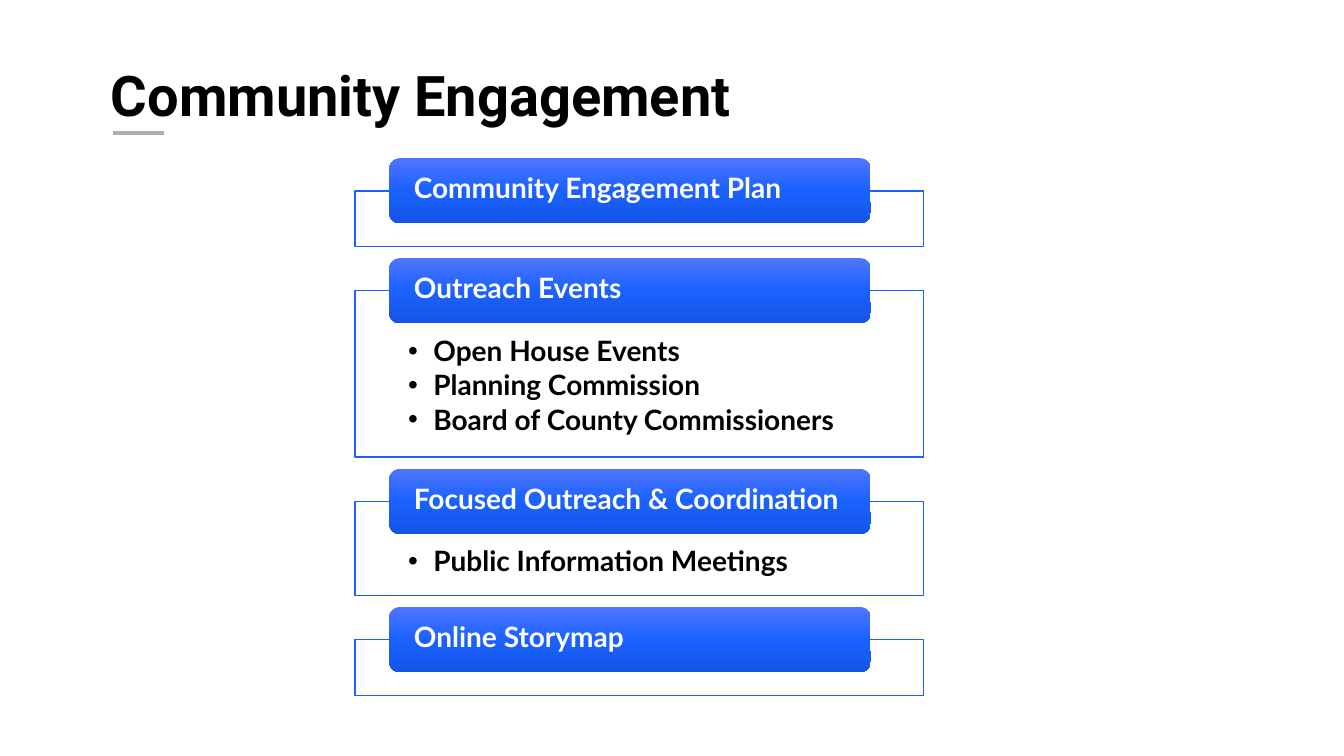
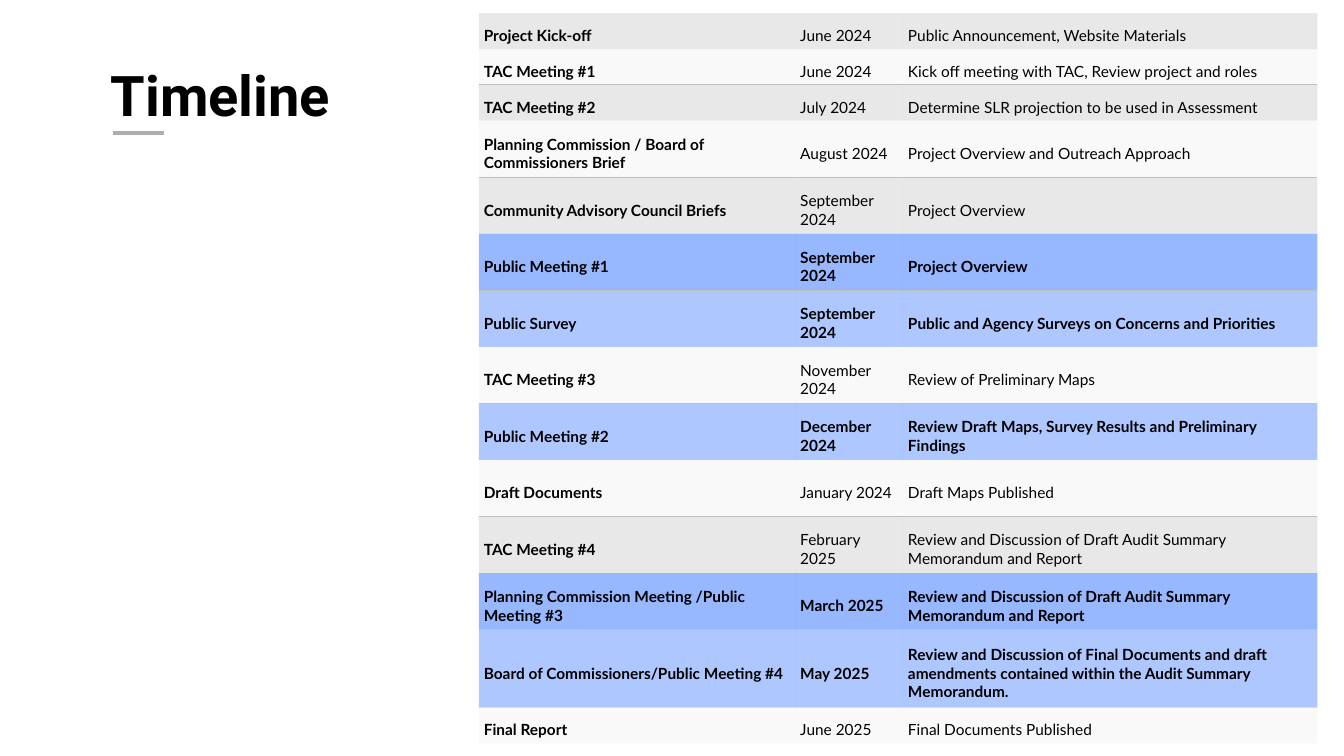
from copy import deepcopy
from typing import NamedTuple

from lxml import etree
from pptx import Presentation
from pptx.dml import color as col
from pptx.enum import shapes as es, text as et
from pptx.oxml import ns
from pptx.util import Pt

BLACK, WHITE, BLUE = "000000", "FFFFFF", "1A61FF"
GRAY, PALE, RULE = "BFBFBF", "F2F2F2", "AEAEAE"
GLOW = ((0, "4F76FF"), (0.5, BLUE), (1, "1555E5"))
HEAD, BODY = "Roboto", "Lato"
PLAIN = "{2D5ABB26-0587-4C30-8999-92F81FD0307C}"  # no style, no grid


class Group(NamedTuple):
    name: str
    high: float
    items: tuple[str, ...] = ()


class Event(NamedTuple):
    name: str
    date: str
    topic: str
    lines: int = 2
    public: bool = False


GROUPS = (
    Group("Community Engagement Plan", 39.7),
    Group("Outreach Events", 118.8,
          ("Open House Events", "Planning Commission", "Board of County Commissioners")),
    Group("Focused Outreach & Coordination", 67, ("Public Information Meetings",)),
    Group("Online Storymap", 39.7),
)

AUDIT = "Review and Discussion of Draft Audit Summary Memorandum and Report"
EVENTS = (
    Event("Project Kick-off", "June 2024", "Public Announcement, Website Materials", 1),
    Event("TAC Meeting #1", "June 2024",
          "Kick off meeting with TAC, Review project and roles", 1),
    Event("TAC Meeting #2", "July 2024",
          "Determine SLR projection to be used in Assessment", 1),
    Event("Planning Commission / Board of Commissioners Brief", "August 2024",
          "Project Overview and Outreach Approach"),
    Event("Community Advisory Council Briefs", "September 2024", "Project Overview"),
    Event("Public Meeting #1", "September 2024", "Project Overview", public=True),
    Event("Public Survey", "September 2024",
          "Public and Agency Surveys on Concerns and Priorities", public=True),
    Event("TAC Meeting #3", "November 2024", "Review of Preliminary Maps"),
    Event("Public Meeting #2", "December 2024",
          "Review Draft Maps, Survey Results and Preliminary Findings", public=True),
    Event("Draft Documents", "January 2024", "Draft Maps Published"),
    Event("TAC Meeting #4", "February 2025", AUDIT),
    Event("Planning Commission Meeting /Public Meeting #3", "March 2025", AUDIT,
          public=True),
    Event("Board of Commissioners/Public Meeting #4", "May 2025",
          "Review and Discussion of Final Documents and draft amendments contained "
          "within the Audit Summary Memorandum.", 3, True),
    Event("Final Report", "June 2025", "Final Documents Published", 1),
)


def ink(code: str) -> col.RGBColor:
    return col.RGBColor.from_string(code)


def style(para, size: float, face: str, code: str, bold: bool = True) -> None:
    font = para.font
    font.size, font.name, font.bold = Pt(size), face, bold
    font.color.rgb = ink(code)


def place(shape, x: float, y: float, wide: float, high: float) -> None:
    shape.left, shape.top, shape.width, shape.height = map(Pt, (x, y, wide, high))


def inset(frame, left: float, top: float, right: float, low: float) -> None:
    frame.margin_left, frame.margin_top = Pt(left), Pt(top)
    frame.margin_right, frame.margin_bottom = Pt(right), Pt(low)


def page(deck, layout: int, title: str):
    """Add a slide with the shared title and its short rule."""
    slide = deck.slides.add_slide(deck.slide_layouts[layout])
    head = slide.shapes.title
    place(head, 72, 25, 826, 70.6)
    frame = head.text_frame
    frame.text = title
    frame.auto_size = et.MSO_AUTO_SIZE.NONE
    frame.vertical_anchor = et.MSO_ANCHOR.BOTTOM
    para = frame.paragraphs[0]
    para.alignment, para.line_spacing = et.PP_ALIGN.LEFT, 0.9
    style(para, 40, HEAD, BLACK)

    rule = slide.shapes.add_connector(
        es.MSO_CONNECTOR.STRAIGHT, Pt(81), Pt(95), Pt(117), Pt(95))
    rule.line.color.rgb, rule.line.width = ink(RULE), Pt(3)
    etree.SubElement(rule._element.spPr, ns.qn("a:effectLst"))
    return slide


def outline(box) -> None:
    box.fill.solid()
    box.fill.fore_color.rgb = ink(WHITE)
    box.line.color.rgb, box.line.width = ink(BLUE), Pt(1)


def bullets(box, items: tuple[str, ...]) -> None:
    frame = box.text_frame
    frame.text = "\n".join(items)
    frame.auto_size = et.MSO_AUTO_SIZE.NONE
    frame.vertical_anchor = et.MSO_ANCHOR.TOP
    inset(frame, 38, 33, 38, 11.5)
    for para in frame.paragraphs:
        props = para._p.get_or_add_pPr()
        props.set("marL", str(Pt(18)))
        props.set("indent", str(Pt(-18)))
        etree.SubElement(props, ns.qn("a:buFont"), typeface="Arial")
        etree.SubElement(props, ns.qn("a:buChar"), char="•")
        para.line_spacing = 0.9
        para.space_before, para.space_after = Pt(0), Pt(3)
        style(para, 20, BODY, BLACK)


def banner(slide, name: str, y: float, high: float) -> None:
    bar = slide.shapes.add_shape(
        es.MSO_SHAPE.ROUNDED_RECTANGLE, Pt(278), Pt(y), Pt(344), Pt(high))
    bar.shadow.inherit = False
    bar.line.fill.background()
    bar.fill.gradient()
    bar.fill.gradient_angle = 270
    stops = bar._element.spPr.find(".//" + ns.qn("a:gsLst"))
    stops.append(deepcopy(stops[0]))
    for stop, (spot, code) in zip(bar.fill.gradient_stops, GLOW):
        stop.position, stop.color.rgb = spot, ink(code)
    frame = bar.text_frame
    frame.text, frame.word_wrap = name, True
    frame.vertical_anchor = et.MSO_ANCHOR.MIDDLE
    inset(frame, 15.4, 0, 15.4, 1.5)
    para = frame.paragraphs[0]
    para.alignment, para.line_spacing = et.PP_ALIGN.LEFT, 0.9
    style(para, 20, BODY, WHITE)


def engage(deck) -> None:
    slide = page(deck, 3, "Community Engagement")
    bodies = iter([p for p in slide.placeholders if p.placeholder_format.idx > 0])
    y, tall, gap = 113, 46.6, 8.4
    for group in GROUPS:
        # Frame starts halfway down its banner
        spot = (253.5, y + tall / 2, 406, group.high)
        if group.items:
            box = next(bodies)
            place(box, *spot)
            bullets(box, group.items)
        else:
            box = slide.shapes.add_shape(es.MSO_SHAPE.RECTANGLE, *map(Pt, spot))
            box.shadow.inherit = False
        outline(box)
        banner(slide, group.name, y, tall)
        y += tall / 2 + group.high + gap


def border(cell) -> None:
    line = etree.SubElement(cell._tc.get_or_add_tcPr(), ns.qn("a:lnB"), w=str(Pt(1)))
    fill = etree.SubElement(line, ns.qn("a:solidFill"))
    etree.SubElement(fill, ns.qn("a:srgbClr"), val=GRAY)


def tint(cell, code: str, part: int) -> None:
    cell.fill.solid()
    cell.fill.fore_color.rgb = ink(code)
    tone = cell._tc.tcPr.find(ns.qn("a:solidFill"))[0]
    etree.SubElement(tone, ns.qn("a:alpha"), val=str(part * 1000))


def timeline(deck) -> None:
    slide = page(deck, 5, "Timeline")
    wides, highs = (226, 77, 296), {1: 25.6, 2: 40.4, 3: 55.7}
    total = sum(highs[e.lines] for e in EVENTS)
    table = slide.shapes.add_table(
        len(EVENTS), len(wides), Pt(342), Pt(9.4), Pt(sum(wides)), Pt(total)).table
    table.first_row = table.horz_banding = False
    table._tbl.tblPr.find(ns.qn("a:tableStyleId")).text = PLAIN
    for column, wide in zip(table.columns, wides):
        column.width = Pt(wide)
    for r, event in enumerate(EVENTS):
        table.rows[r].height = Pt(highs[event.lines])
        odd = r % 2 == 1
        code = BLUE if event.public else PALE if odd else GRAY
        for c, words in enumerate((event.name, event.date, event.topic)):
            cell = table.cell(r, c)
            cell.text = words
            cell.vertical_anchor = et.MSO_ANCHOR.MIDDLE
            inset(cell, 3.6, 6.5, 3.6, 0)
            style(cell.text_frame.paragraphs[0], 11, BODY, BLACK, c == 0 or event.public)
            if odd and r < len(EVENTS) - 1:
                border(cell)
            tint(cell, code, 45 if odd else 35)


def main() -> None:
    deck = Presentation()
    deck.slide_width, deck.slide_height = Pt(960), Pt(540)
    engage(deck)
    timeline(deck)
    deck.save("out.pptx")


if __name__ == "__main__":
    main()
